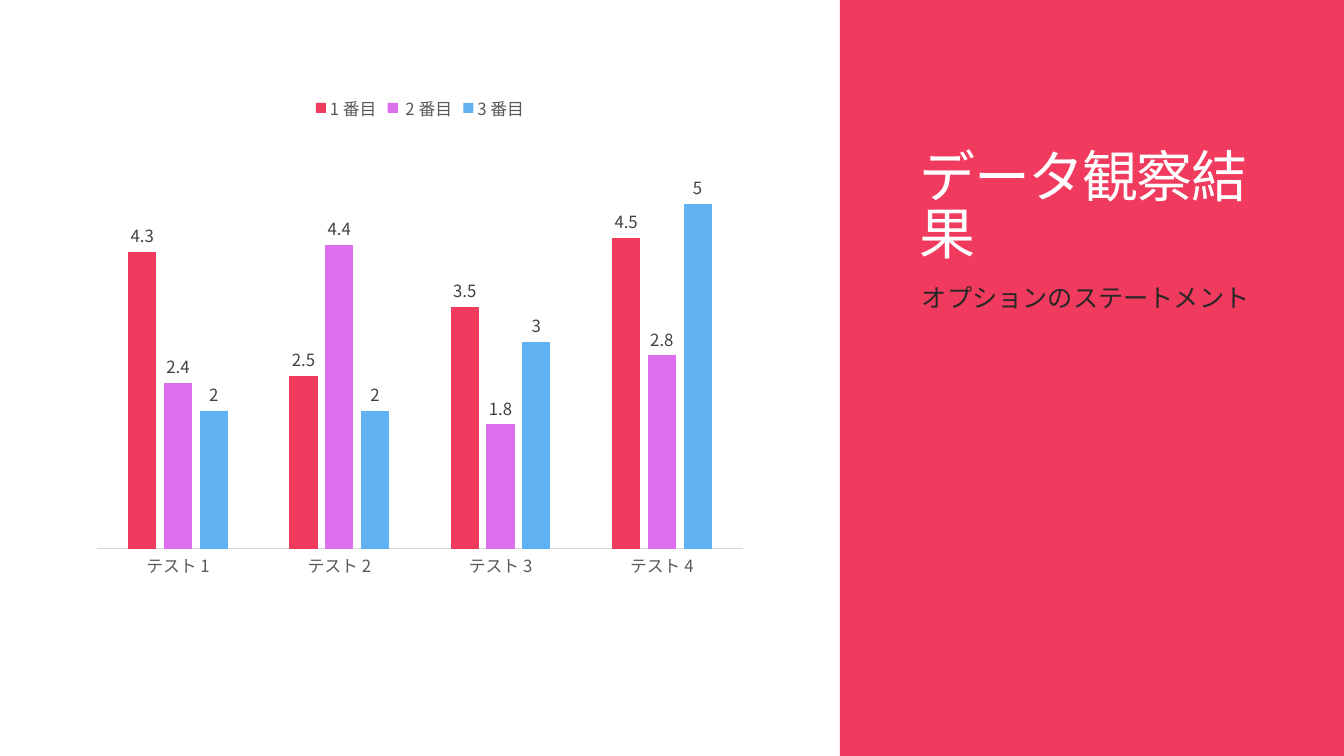
from pptx import Presentation
from pptx.chart.data import CategoryChartData
from pptx.dml.color import RGBColor
from pptx.enum.chart import XL_CHART_TYPE, XL_LABEL_POSITION, XL_LEGEND_POSITION, XL_TICK_MARK
from pptx.enum.shapes import MSO_SHAPE
from pptx.enum.text import MSO_ANCHOR
from pptx.oxml.ns import qn
from pptx.util import Emu, Pt

RECTANGLE = MSO_SHAPE.RECTANGLE
TOP, BOTTOM = MSO_ANCHOR.TOP, MSO_ANCHOR.BOTTOM
CLUSTERED = XL_CHART_TYPE.COLUMN_CLUSTERED
OUTSIDE_END = XL_LABEL_POSITION.OUTSIDE_END
LEGEND_TOP = XL_LEGEND_POSITION.TOP
NO_TICK = XL_TICK_MARK.NONE

EMU_PER_PX = 914400 / 100.8
FONT = "Noto Sans CJK JP"

WHITE = RGBColor(0xFF, 0xFF, 0xFF)
BLACK = RGBColor(0x00, 0x00, 0x00)
RED = RGBColor(0xF0, 0x3B, 0x5E)
PURPLE = RGBColor(0xDC, 0x6F, 0xEC)
BLUE = RGBColor(0x60, 0xB1, 0xF2)
INK = RGBColor(0x26, 0x26, 0x26)
LABEL_GREY = RGBColor(0x40, 0x40, 0x40)
AXIS_GREY = RGBColor(0x59, 0x59, 0x59)
LINE_GREY = RGBColor(0xD9, 0xD9, 0xD9)

TESTS = ["テスト 1", "テスト 2", "テスト 3", "テスト 4"]
RESULTS = [
    ("1 番目", [4.3, 2.5, 3.5, 4.5], RED),
    (" 2 番目", [2.4, 4.4, 1.8, 2.8], PURPLE),
    ("3 番目", [2, 2, 3, 5], BLUE),
]


def px(length):
    return Emu(round(length * EMU_PER_PX))


def box(*lengths):
    return [px(length) for length in lengths]


def style_font(font, size, color):
    font.name = FONT
    font.size = Pt(size)
    font.bold = False
    font.color.rgb = color


def set_east_asian_font(element):
    """Give Japanese characters the same typeface as Latin ones."""
    for latin in list(element.iter(qn("a:latin"))):
        east_asian = latin.makeelement(qn("a:ea"), {"typeface": FONT})
        latin.addnext(east_asian)


def add_panel(slide, bounds, color):
    panel = slide.shapes.add_shape(RECTANGLE, *box(*bounds))
    panel.shadow.inherit = False
    panel.fill.solid()
    panel.fill.fore_color.rgb = color
    panel.line.fill.background()


def add_text(slide, bounds, text, size, color, anchor):
    frame = slide.shapes.add_textbox(*box(*bounds)).text_frame
    frame.word_wrap = True
    frame.vertical_anchor = anchor
    frame.text = text
    paragraph = frame.paragraphs[0]
    style_font(paragraph.runs[0].font, size, color)
    return paragraph


def add_column_chart(slide, bounds):
    data = CategoryChartData()
    data.categories = TESTS
    for name, values, _ in RESULTS:
        data.add_series(name, values)
    chart = slide.shapes.add_chart(CLUSTERED, *box(*bounds), data).chart
    style_font(chart.font, 10, BLACK)
    chart.has_title = False

    # Legend
    chart.has_legend = True
    chart.legend.position = LEGEND_TOP
    chart.legend.include_in_layout = False
    style_font(chart.legend.font, 12, AXIS_GREY)

    # Axes
    test_axis = chart.category_axis
    test_axis.major_tick_mark = NO_TICK
    test_axis.format.line.color.rgb = LINE_GREY
    test_axis.format.line.width = Pt(0.75)
    style_font(test_axis.tick_labels.font, 12, AXIS_GREY)
    value_axis = chart.value_axis
    value_axis.visible = False
    value_axis.has_major_gridlines = False
    value_axis.minimum_scale = 0
    value_axis.maximum_scale = 6

    # Columns and their values
    plot = chart.plots[0]
    plot.vary_by_categories = False
    plot.gap_width = 219
    plot.overlap = -27
    for series, (_, _, color) in zip(plot.series, RESULTS):
        series.format.fill.solid()
        series.format.fill.fore_color.rgb = color
        labels = series.data_labels
        labels.show_value = True
        labels.position = OUTSIDE_END
        style_font(labels.font, 12, LABEL_GREY)
    set_east_asian_font(chart.element)


def main():
    deck = Presentation()
    deck.slide_width, deck.slide_height = px(1344), px(756)
    slide = deck.slides.add_slide(deck.slide_layouts[6])

    # Side panel with title and statement
    add_panel(slide, (840, 0, 504, 756), RED)
    title = add_text(slide, (910, 59, 373, 212), "データ観察結果", 40, WHITE, BOTTOM)
    title.line_spacing = 0.85
    title.runs[0].font._element.set("spc", "-120")
    statement = add_text(slide, (912, 277, 375, 345), "オプションのステートメント", 18, INK, TOP)
    statement.space_before = Pt(12)
    set_east_asian_font(slide.element)

    # Test results
    add_column_chart(slide, (84, 84, 672, 504))

    deck.save("out.pptx")


if __name__ == "__main__":
    main()
